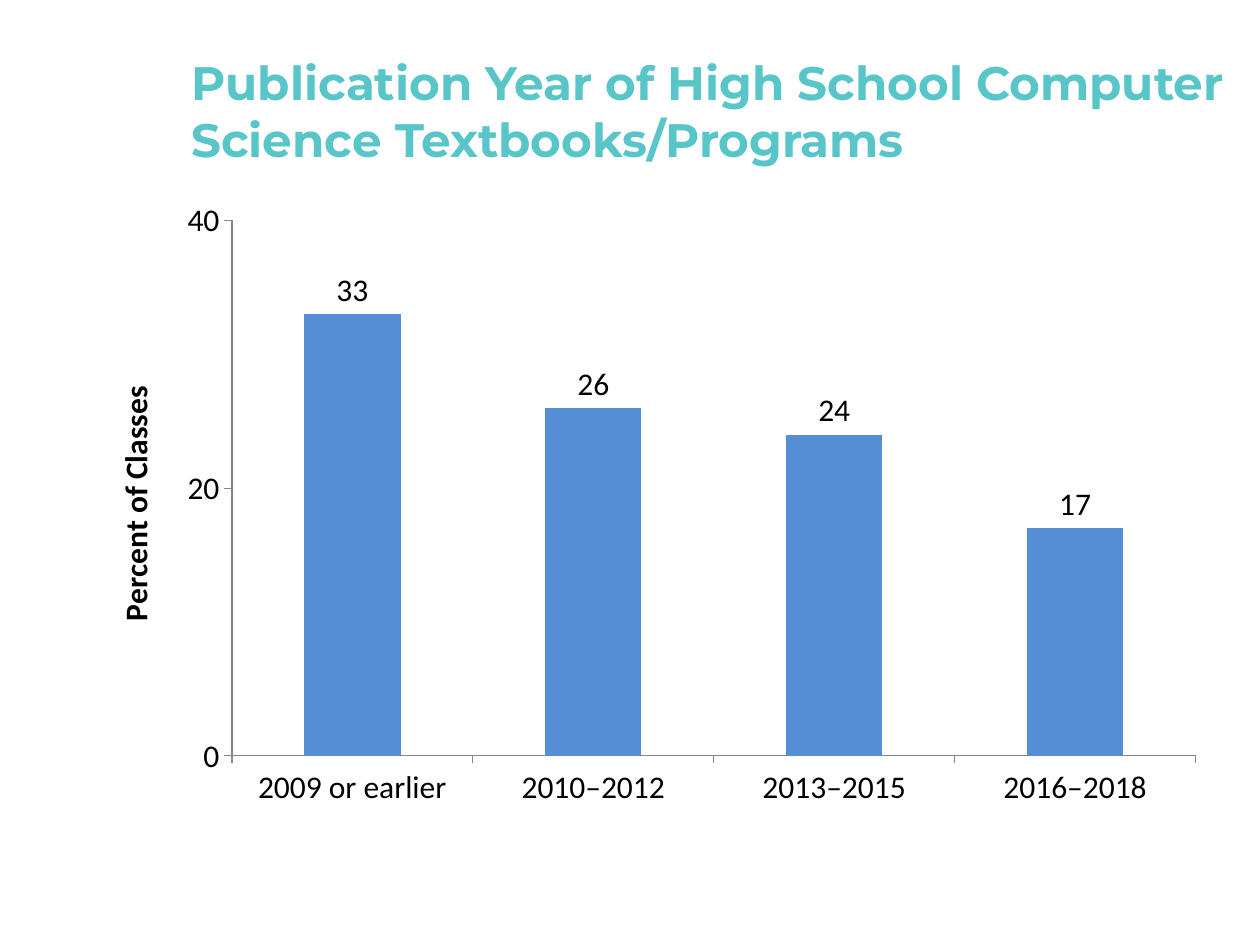
from dataclasses import dataclass

from lxml.etree import SubElement
from pptx import Presentation
from pptx.chart.data import CategoryChartData
from pptx.dml.color import RGBColor
from pptx.enum.chart import XL_CHART_TYPE, XL_LABEL_POSITION, XL_TICK_MARK
from pptx.enum.text import MSO_ANCHOR, MSO_AUTO_SIZE, PP_ALIGN
from pptx.oxml.ns import qn
from pptx.util import Inches, Pt


@dataclass(frozen=True)
class Theme:
    heading: RGBColor = RGBColor(0x58, 0xC5, 0xC9)
    bar: RGBColor = RGBColor(0x55, 0x8E, 0xD5)
    text: RGBColor = RGBColor(0, 0, 0)
    axis: RGBColor = RGBColor(0x86, 0x86, 0x86)
    heading_font: str = "Montserrat"
    chart_font: str = "Calibri"
    heading_size: float = 26.8
    chart_size: float = 18


THEME = Theme()
WIDTH, HEIGHT = Inches(10), Inches(7.5)

# Left, top, width and height as shares of the slide
TITLE_BOX = (0.142, 1 / 30, 0.842, 1 / 6)
CHART_BOX = (0.067, 0.2, 0.9, 2 / 3)
# Inner plot area as shares of the chart
PLOT_BOX = (0.13, 0.05, 0.85, 0.85)

CLASSES_BY_YEAR = {
    "2009 or earlier": 33,
    "2010–2012": 26,
    "2013–2015": 24,
    "2016–2018": 17,
}


def place(box):
    """Turn shares of the slide into lengths."""
    return [int(share * side) for share, side in zip(box, (WIDTH, HEIGHT) * 2)]


def style_font(font, name, size, color, bold=False):
    font.name = name
    font.size = Pt(size)
    font.bold = bold
    font.color.rgb = color


def set_title(slide, text):
    sp = slide.shapes.title
    sp.left, sp.top, sp.width, sp.height = place(TITLE_BOX)
    tf = sp.text_frame
    tf.text = text
    tf.word_wrap = True
    tf.auto_size = MSO_AUTO_SIZE.NONE
    tf.vertical_anchor = MSO_ANCHOR.MIDDLE
    p = tf.paragraphs[0]
    p.alignment = PP_ALIGN.LEFT
    style_font(p.runs[0].font, THEME.heading_font, THEME.heading_size,
               THEME.heading, bold=True)


def set_plot_layout(chart, box):
    """Fix the inner plot area within the chart."""
    plot_area = chart.plots[0]._element.getparent()
    layout = plot_area.find(qn("c:layout"))
    if layout is None:
        layout = plot_area.makeelement(qn("c:layout"))
        plot_area.insert(0, layout)
    manual = SubElement(layout, qn("c:manualLayout"))
    settings = [("layoutTarget", "inner"), ("xMode", "edge"), ("yMode", "edge")]
    for tag, value in settings + list(zip("xywh", box)):
        SubElement(manual, qn(f"c:{tag}")).set("val", str(value))


def style_axis(axis):
    axis.has_major_gridlines = False
    axis.major_tick_mark = XL_TICK_MARK.OUTSIDE
    axis.minor_tick_mark = XL_TICK_MARK.NONE
    axis.format.line.color.rgb = THEME.axis
    axis.format.line.width = Pt(0.75)


def add_column_chart(slide, values, axis_title):
    data = CategoryChartData()
    data.categories = list(values)
    data.add_series("Series 1", list(values.values()))
    chart = slide.shapes.add_chart(
        XL_CHART_TYPE.COLUMN_CLUSTERED, *place(CHART_BOX), data).chart
    chart.has_legend = False
    chart.has_title = False
    chart_style = (THEME.chart_font, THEME.chart_size, THEME.text)
    style_font(chart.font, *chart_style)
    set_plot_layout(chart, PLOT_BOX)

    # Axes
    for axis in (chart.category_axis, chart.value_axis):
        style_axis(axis)
    axis = chart.value_axis
    axis.minimum_scale, axis.maximum_scale, axis.major_unit = 0, 40, 20
    tf = axis.axis_title.text_frame
    tf.text = axis_title
    style_font(tf.paragraphs[0].runs[0].font, *chart_style, bold=True)

    # Columns and their values
    plot = chart.plots[0]
    plot.gap_width = 150
    plot.vary_by_categories = False
    fill = plot.series[0].format.fill
    fill.solid()
    fill.fore_color.rgb = THEME.bar
    plot.has_data_labels = True
    labels = plot.data_labels
    labels.show_value = True
    labels.position = XL_LABEL_POSITION.OUTSIDE_END
    style_font(labels.font, *chart_style)


def main():
    prs = Presentation()
    prs.slide_width, prs.slide_height = WIDTH, HEIGHT
    slide = prs.slides.add_slide(prs.slide_layouts.get_by_name("Title Only"))
    set_title(slide, "Publication Year of High School Computer "
                     "Science Textbooks/Programs")
    add_column_chart(slide, CLASSES_BY_YEAR, "Percent of Classes")
    prs.save("out.pptx")


if __name__ == "__main__":
    main()
